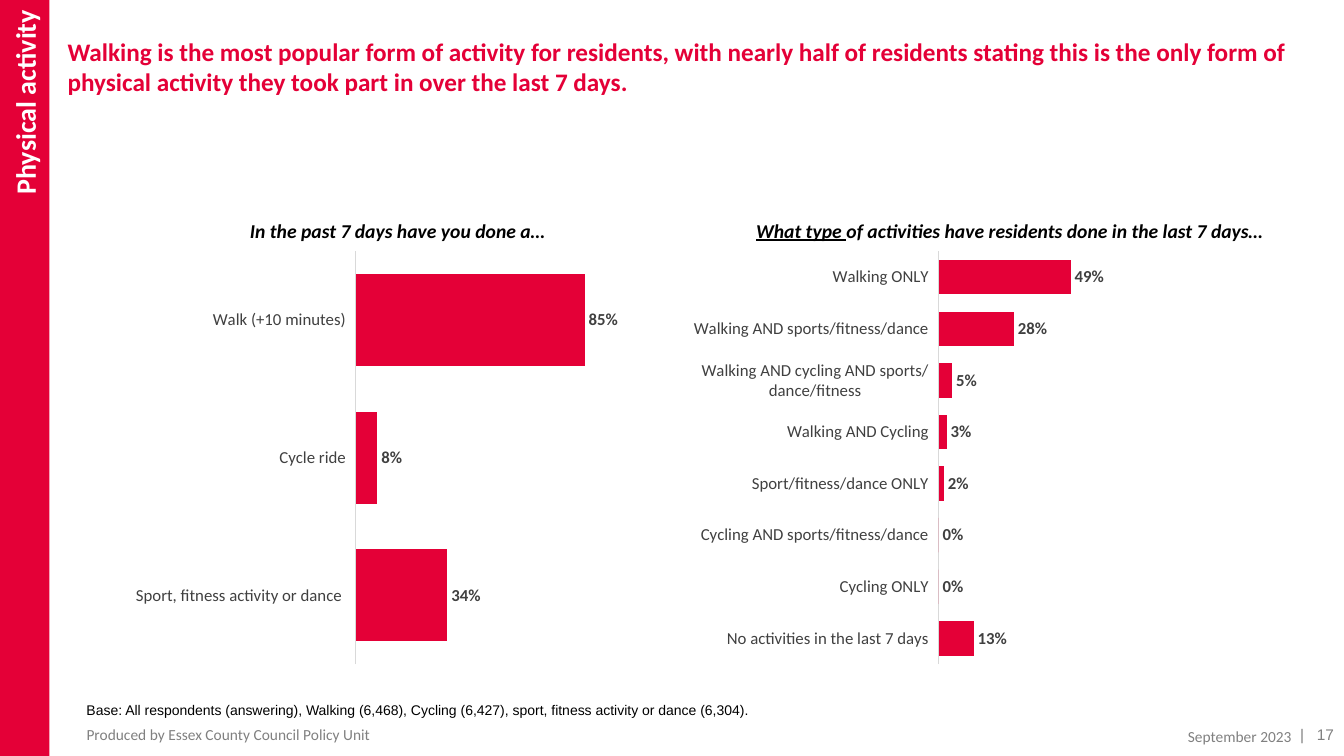
from lxml import etree
from pptx import Presentation
from pptx.chart.data import CategoryChartData
from pptx.dml.color import RGBColor
from pptx.enum.chart import XL_CHART_TYPE, XL_LABEL_POSITION, XL_TICK_LABEL_POSITION, XL_TICK_MARK
from pptx.enum.shapes import MSO_SHAPE
from pptx.enum.text import MSO_ANCHOR, PP_ALIGN
from pptx.oxml import parse_xml
from pptx.oxml.ns import qn
from pptx.util import Inches, Pt

BAR = XL_CHART_TYPE.BAR_CLUSTERED
OUT_END = XL_LABEL_POSITION.OUTSIDE_END
LOW = XL_TICK_LABEL_POSITION.LOW
NO_TICK = XL_TICK_MARK.NONE
RECT = MSO_SHAPE.RECTANGLE
TOP, MIDDLE = MSO_ANCHOR.TOP, MSO_ANCHOR.MIDDLE
LEFT, RIGHT = PP_ALIGN.LEFT, PP_ALIGN.RIGHT
RED = RGBColor(0xE4, 0x00, 0x37)
BLACK = RGBColor(0x00, 0x00, 0x00)
WHITE = RGBColor(0xFF, 0xFF, 0xFF)
DARK = RGBColor(0x40, 0x40, 0x40)
GREY = RGBColor(0x80, 0x80, 0x80)
PALE = RGBColor(0xD9, 0xD9, 0xD9)
LAYOUT = (
    '<c:layout xmlns:c="http://schemas.openxmlformats.org/drawingml/2006/chart">'
    '<c:manualLayout><c:layoutTarget val="inner"/>'
    '<c:xMode val="edge"/><c:yMode val="edge"/>'
    '<c:x val="0.486"/><c:y val="0.008"/><c:w val="0.484"/><c:h val="0.948"/>'
    '</c:manualLayout></c:layout>'
)


def style(font, size, color, name="Calibri", bold=False):
    font.size = Pt(size)
    font.color.rgb = color
    font.name = name
    font.bold = bold


def add_text(left, top, width, height, words, size, color, name="Calibri", align=LEFT, anchor=TOP):
    box = slide.shapes.add_textbox(Inches(left), Inches(top), Inches(width), Inches(height))
    frame = box.text_frame
    frame.word_wrap = True
    frame.vertical_anchor = anchor
    para = frame.paragraphs[0]
    para.alignment = align
    for word in words:
        run = para.add_run()
        run.text = word
        style(run.font, size, color, name)
    return para


prs = Presentation()
prs.slide_width = Inches(13.33)
prs.slide_height = Inches(7.5)
slide = prs.slides.add_slide(prs.slide_layouts[5])

title = slide.shapes.title
title.left, title.top = Inches(0.67), Inches(0.36)
title.width, title.height = Inches(12.53), Inches(1.16)
frame = title.text_frame
frame.word_wrap = True
frame.vertical_anchor = TOP
frame.margin_left = frame.margin_right = frame.margin_top = frame.margin_bottom = 0
para = frame.paragraphs[0]
para.alignment = LEFT
run = para.add_run()
run.text = (
    "Walking is the most popular form of activity for residents, with nearly half of residents "
    "stating this is the only form of physical activity they took part in over the last 7 days."
)
style(run.font, 18, RED, bold=True)

band = slide.shapes.add_shape(RECT, 0, 0, Inches(0.49), Inches(7.5))
band.shadow.inherit = False
band.fill.solid()
band.fill.fore_color.rgb = RED
band.line.fill.background()
frame = band.text_frame
frame.margin_left = frame.margin_top = frame.margin_right = Inches(0.1)
frame.margin_bottom = Inches(0.05)
frame.vertical_anchor = MIDDLE
band.element.txBody.bodyPr.set("vert", "vert270")
para = frame.paragraphs[0]
para.alignment = RIGHT
run = para.add_run()
run.text = "Physical activity"
style(run.font, 20, WHITE, bold=True)

done = [
    ("Walk (+10 minutes)", 0.85),
    ("Cycle ride", 0.08),
    ("Sport, fitness activity or dance ", 0.34),
]
types = [
    ("Walking ONLY", 0.49),
    ("Walking AND sports/fitness/dance", 0.28),
    ("Walking AND cycling AND sports/dance/fitness", 0.05),
    ("Walking AND Cycling", 0.03),
    ("Sport/fitness/dance ONLY", 0.02),
    ("Cycling AND sports/fitness/dance", 0),
    ("Cycling ONLY", 0),
    ("No activities in the last 7 days", 0.13),
]
for left, rows in [(0.58, done), (6.36, types)]:
    data = CategoryChartData(number_format="0%")
    data.categories = [name for name, share in rows]
    data.add_series("Series 1", [share for name, share in rows])
    chart = slide.shapes.add_chart(
        BAR, Inches(left), Inches(2.46), Inches(6.07), Inches(4.32), data
    ).chart
    style(chart.font, 10, BLACK)
    chart.has_title = False
    chart.has_legend = False

    axis = chart.category_axis
    axis.reverse_order = True
    axis.major_tick_mark = axis.minor_tick_mark = NO_TICK
    axis.tick_label_position = LOW
    axis.format.line.color.rgb = PALE
    axis.format.line.width = Pt(0.75)
    style(axis.tick_labels.font, 12, DARK)

    scale = chart.value_axis
    scale.minimum_scale, scale.maximum_scale = 0, 1.1
    scale.has_major_gridlines = False
    scale.visible = False

    plot = chart.plots[0]
    plot.gap_width = 50
    plot.vary_by_categories = False
    bars = plot.series[0]
    bars.format.fill.solid()
    bars.format.fill.fore_color.rgb = RED
    labels = bars.data_labels
    labels.show_value = True
    labels.position = OUT_END
    labels.number_format = "0%"
    labels.number_format_is_linked = False
    style(labels.font, 12, DARK, bold=True)

    area = chart.element.find(".//" + qn("c:plotArea"))
    etree.strip_elements(area, qn("c:layout"))
    area.insert(0, parse_xml(LAYOUT))

heads = [
    (2.38, 4.55, ["In the past 7 days have you done a…"]),
    (7.4, 5.31, ["What type ", "of activities have residents done in the last 7 days…"]),
]
for left, width, words in heads:
    para = add_text(left, 2.12, width, 0.34, words, 14, BLACK)
    para.space_before = Pt(6)
    for run in para.runs:
        run.font.bold = run.font.italic = True
        run.font.underline = run.text == "What type "

base = "Base: All respondents (answering), Walking (6,468), Cycling (6,427), sport, fitness activity or dance (6,304)."
add_text(0.76, 6.91, 8.03, 0.27, [base], 10, BLACK, "Arial")
maker = add_text(0.76, 7.21, 6.45, 0.15, ["Produced by Essex County Council Policy Unit"], 11, GREY, anchor=MIDDLE)
add_text(10.51, 7.23, 2.4, 0.15, ["September 2023"], 11, GREY, align=RIGHT, anchor=MIDDLE)
add_text(12.48, 7.21, 0.85, 0.15, ["|   17"], 11, GREY, "Arial", RIGHT, MIDDLE)

prs.save("out.pptx")
